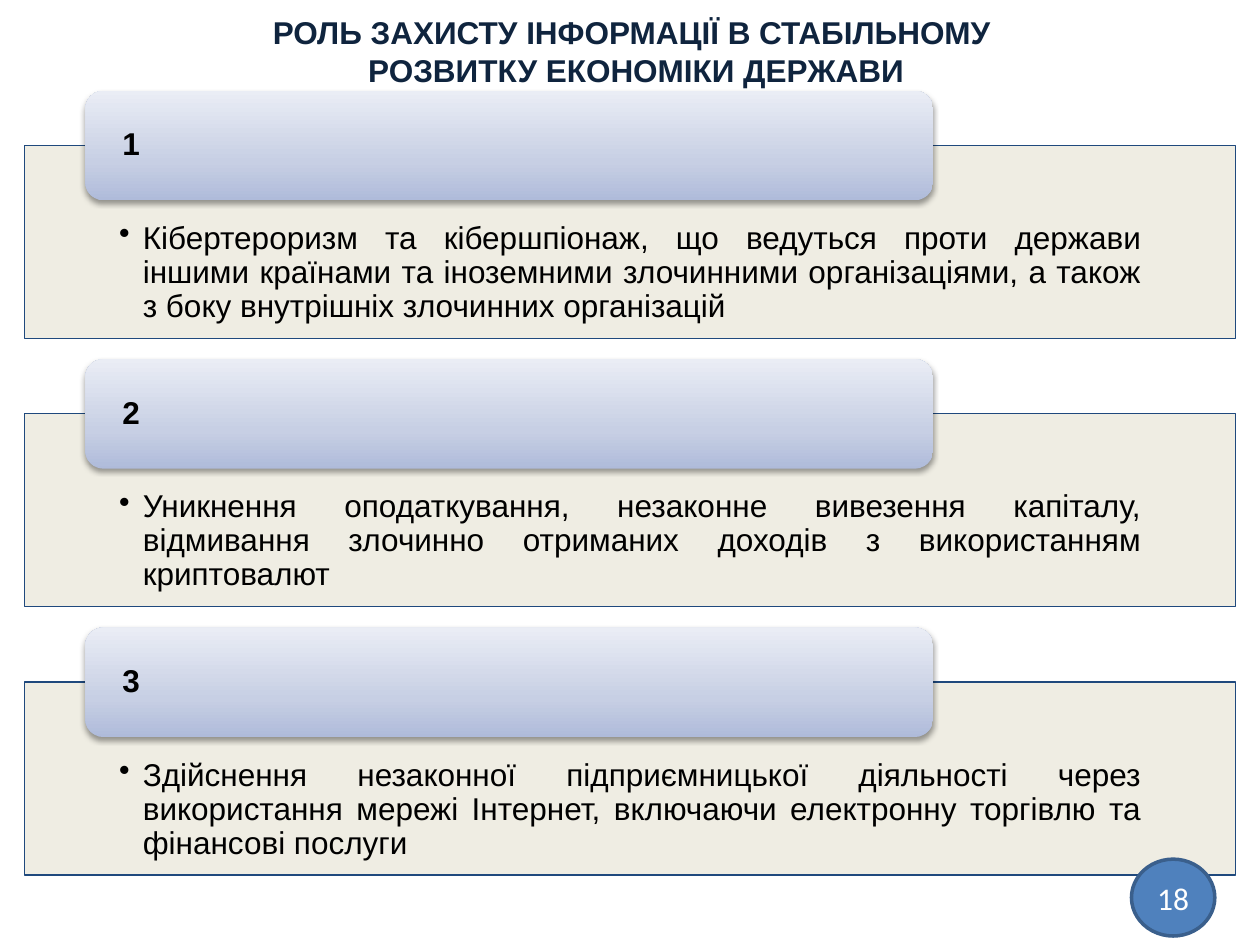
from dataclasses import dataclass

from lxml import etree
from pptx import Presentation
from pptx.dml.color import RGBColor
from pptx.enum.shapes import MSO_SHAPE
from pptx.enum.text import MSO_ANCHOR, MSO_AUTO_SIZE, PP_ALIGN
from pptx.oxml.ns import qn
from pptx.util import Cm, Pt

RECT, ROUNDED, OVAL = MSO_SHAPE.RECTANGLE, MSO_SHAPE.ROUNDED_RECTANGLE, MSO_SHAPE.OVAL
TOP, MIDDLE = MSO_ANCHOR.TOP, MSO_ANCHOR.MIDDLE
LEFT, CENTER, JUSTIFY = PP_ALIGN.LEFT, PP_ALIGN.CENTER, PP_ALIGN.JUSTIFY
NO_AUTOFIT = MSO_AUTO_SIZE.NONE

TITLE = ["РОЛЬ ЗАХИСТУ ІНФОРМАЦІЇ В СТАБІЛЬНОМУ ", "РОЗВИТКУ ЕКОНОМІКИ ДЕРЖАВИ"]
THREATS = [
    "Кібертероризм та кібершпіонаж, що ведуться проти держави іншими країнами та "
    "іноземними злочинними організаціями, а також з боку внутрішніх злочинних організацій",
    "Уникнення оподаткування, незаконне вивезення капіталу, відмивання злочинно "
    "отриманих доходів з використанням криптовалют",
    "Здійснення незаконної підприємницької діяльності через використання мережі "
    "Інтернет, включаючи електронну торгівлю та фінансові послуги",
]
ROW_PITCH = 5.41


@dataclass(frozen=True)
class Theme:
    font: str = "Arial"
    number_font: str = "Calibri"
    size: int = 18
    title: str = "0F243E"
    text: str = "000000"
    panel: str = "EEECE1"
    panel_line: str = "1F497D"
    badge: str = "4F81BD"
    badge_line: str = "3A5F8C"
    badge_text: str = "FFFFFF"
    label_stops: tuple = ((0, "AFBBDA"), (35, "C7CFE4"), (100, "EAEDF5"))


def add_color(parent, color, alpha=None):
    clr = etree.SubElement(parent, qn("a:srgbClr"), val=color)
    if alpha is not None:
        etree.SubElement(clr, qn("a:alpha"), val=str(alpha * 1000))


class SlideBuilder:
    """Draws the elements of one slide in a shared theme."""

    def __init__(self, slide, theme):
        self.slide = slide
        self.theme = theme

    def _shape(self, kind, box):
        sp = self.slide.shapes.add_shape(kind, *map(Cm, box))
        sp.shadow.inherit = False
        return sp

    def _paint(self, sp, fill, line, width):
        sp.fill.solid()
        sp.fill.fore_color.rgb = RGBColor.from_string(fill)
        sp.line.color.rgb = RGBColor.from_string(line)
        sp.line.width = Pt(width)

    def _frame(self, sp, anchor, insets):
        tf = sp.text_frame
        tf.word_wrap = True
        tf.vertical_anchor = anchor
        tf.margin_left, tf.margin_top, tf.margin_right, tf.margin_bottom = map(Cm, insets)
        return tf

    def _style(self, p, align, color, bold=False, font=None, spacing=1.0):
        p.alignment = align
        p.line_spacing = spacing
        p.font.name = font or self.theme.font
        p.font.size = Pt(self.theme.size)
        p.font.bold = bold
        p.font.color.rgb = RGBColor.from_string(color)

    def title(self, lines, box):
        sp = self.slide.shapes.title
        sp.left, sp.top, sp.width, sp.height = map(Cm, box)
        tf = self._frame(sp, TOP, (0.25, 0.13, 0.25, 0.13))
        tf.auto_size = NO_AUTOFIT
        tf.text = "\n".join(lines)
        for p in tf.paragraphs:
            self._style(p, CENTER, self.theme.title, bold=True)

    def panel(self, text, box):
        sp = self._shape(RECT, box)
        self._paint(sp, self.theme.panel, self.theme.panel_line, 0.75)
        clr = sp._element.spPr.find(qn("a:solidFill")).find(qn("a:srgbClr"))
        etree.SubElement(clr, qn("a:alpha"), val="90000")
        tf = self._frame(sp, TOP, (1.9, 1.55, 1.9, 0.36))
        p = tf.paragraphs[0]
        p.text = text
        self._style(p, JUSTIFY, self.theme.text, spacing=0.9)
        self._bullet(p, Cm(0.48))

    def _bullet(self, p, indent):
        pPr = p._p.get_or_add_pPr()
        pPr.set("marL", str(indent))
        pPr.set("indent", str(-indent))
        bullet = etree.Element(qn("a:buChar"), char="•")
        pPr.find(qn("a:defRPr")).addprevious(bullet)

    def label(self, text, box):
        sp = self._shape(ROUNDED, box)
        sp.line.fill.background()
        sp.fill.gradient()
        sp.fill.gradient_angle = 90
        spPr = sp._element.spPr
        stops = spPr.find(qn("a:gradFill")).find(qn("a:gsLst"))
        for stop in list(stops):
            stops.remove(stop)
        for pos, color in self.theme.label_stops:
            add_color(etree.SubElement(stops, qn("a:gs"), pos=str(pos * 1000)), color)
        shadow = etree.SubElement(
            spPr.find(qn("a:effectLst")), qn("a:outerShdw"),
            blurRad=str(Pt(3.1)), dist=str(Pt(1.6)), dir="5400000", rotWithShape="0")
        add_color(shadow, self.theme.text, 38)
        p = self._frame(sp, MIDDLE, (0.64, 0, 0.64, 0)).paragraphs[0]
        p.text = text
        self._style(p, LEFT, self.theme.text, bold=True, spacing=0.9)

    def badge(self, text, box):
        sp = self._shape(OVAL, box)
        self._paint(sp, self.theme.badge, self.theme.badge_line, 2)
        p = self._frame(sp, MIDDLE, (0.25, 0.13, 0.25, 0.13)).paragraphs[0]
        p.text = text
        self._style(p, CENTER, self.theme.badge_text, font=self.theme.number_font)


def main():
    prs = Presentation()
    prs.slide_width, prs.slide_height = Cm(25.4), Cm(19.05)
    s = SlideBuilder(prs.slides.add_slide(prs.slide_layouts[5]), Theme())
    s.title(TITLE, (0.38, 0.13, 24.89, 1.7))
    for i, threat in enumerate(THREATS):
        y = i * ROW_PITCH
        s.panel(threat, (0.5, 2.93 + y, 24.41, 3.89))
        s.label(str(i + 1), (1.72, 1.83 + y, 17.09, 2.21))
    s.badge("18", (22.81, 17.32, 1.68, 1.55))
    prs.save("out.pptx")


if __name__ == "__main__":
    main()
